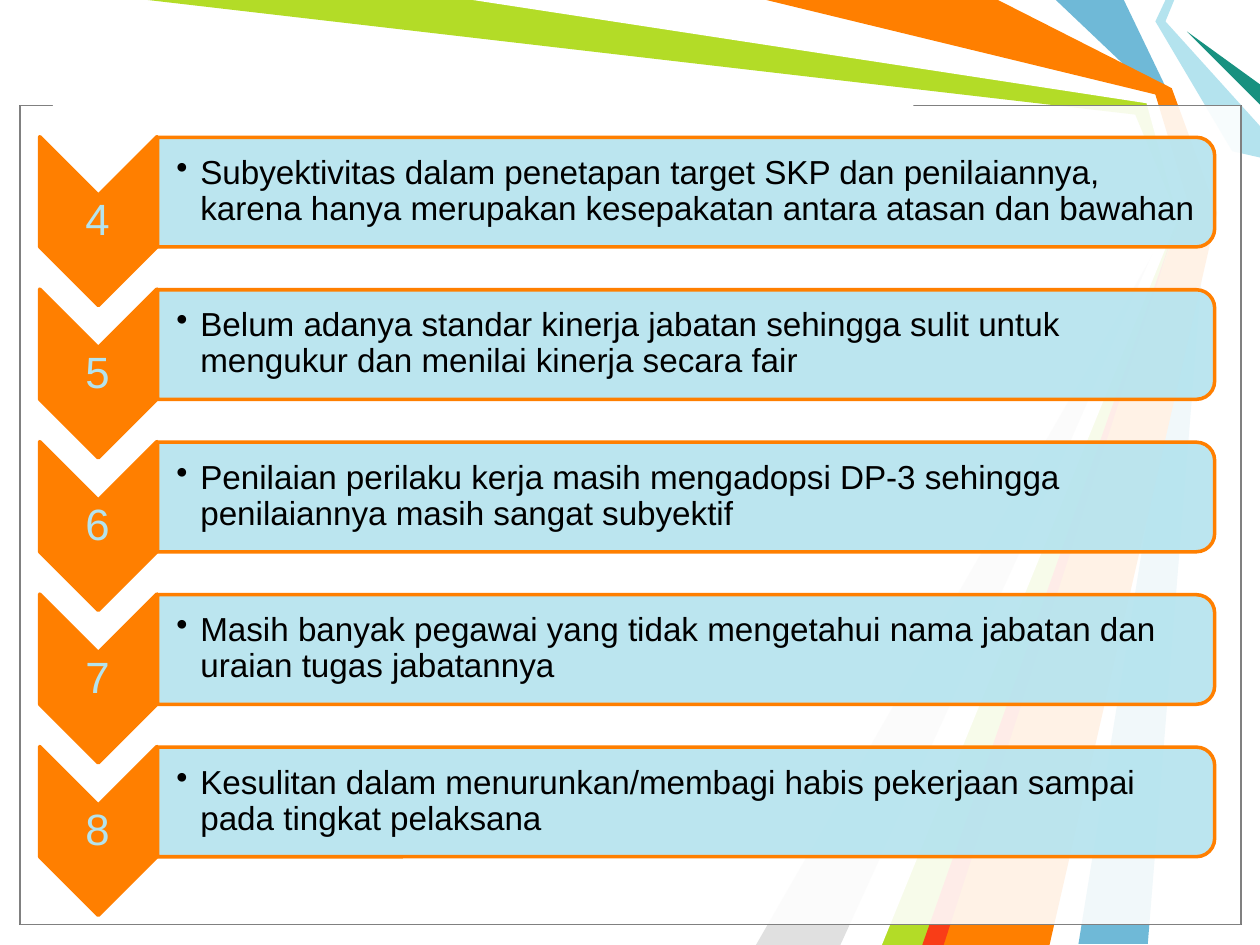
from lxml.etree import SubElement
from pptx import Presentation
from pptx.dml.color import RGBColor
from pptx.enum.shapes import MSO_SHAPE
from pptx.enum.text import MSO_ANCHOR, PP_ALIGN
from pptx.oxml.ns import qn
from pptx.util import Inches, Pt

COLORS = {
    "blue": "6FB9D7", "lime": "B3DC27", "gray": "E0E0E0", "white": "FFFFFF",
    "pale": "B4E3EE", "teal": "189180", "orange": "FF7F00", "red": "F93D17",
    "black": "000000", "edge": "808080",
}

# Ray outlines, in hundredths of an inch
RAYS = [
    ("blue", [(838, 0), (892, 0), (929, 77), (958, 167), (911, 749),
              (856, 749), (950, 167), (917, 75)]),
    ("lime", [(117, 0), (383, 0), (914, 78), (942, 169), (742, 750),
              (692, 750), (935, 173), (901, 91)]),
    ("gray", [(667, 750), (927, 181), (600, 750)]),
    ("white", [(375, 0), (910, 82), (932, 162), (675, 750), (700, 750),
               (941, 158), (917, 75), (600, 0)]),
    ("pale", [(925, 0), (917, 17), (978, 120), (1000, 125), (1000, 100),
              (925, 17), (932, 0)]),
    ("teal", [(1000, 83), (942, 25), (1000, 67)]),
    ("orange", [(608, 0), (792, 0), (930, 70), (966, 169), (833, 750),
                (733, 750), (942, 158), (917, 75)]),
    ("red", [(732, 750), (932, 183), (749, 750)]),
]

ITEMS = [
    "Subyektivitas dalam penetapan target SKP dan penilaiannya, "
    "karena hanya merupakan kesepakatan antara atasan dan bawahan",
    "Belum adanya standar kinerja jabatan sehingga sulit untuk "
    "mengukur dan menilai kinerja secara fair",
    "Penilaian perilaku kerja masih mengadopsi DP-3 sehingga "
    "penilaiannya masih sangat subyektif",
    "Masih banyak pegawai yang tidak mengetahui nama jabatan dan "
    "uraian tugas jabatannya",
    "Kesulitan dalam menurunkan/membagi habis pekerjaan sampai "
    "pada tingkat pelaksana",
]
FIRST = 4
TOP, STEP = 1.29, 1.21

NUMBER = {"size": Pt(25), "name": "Arial"}
BODY = {"size": Pt(19), "name": "Arial"}


def put(target, values):
    """Set each named attribute on the target."""
    for name, value in values.items():
        setattr(target, name, value)


def rgb(name):
    return RGBColor.from_string(COLORS[name])


def paint(shape, fill, line=None, width=0.75, alpha=100):
    shape.shadow.inherit = False
    shape.fill.solid()
    shape.fill.fore_color.rgb = rgb(fill)
    if alpha < 100:
        color = shape._element.spPr.find(qn("a:solidFill"))[0]
        SubElement(color, qn("a:alpha"), val=str(alpha * 1000))
    if line:
        shape.line.color.rgb = rgb(line)
        shape.line.width = Pt(width)
    else:
        shape.line.fill.background()


def add_ray(slide, color, points):
    pen = slide.shapes.build_freeform(*points[0], scale=Inches(0.01))
    pen.add_line_segments(points[1:], close=True)
    paint(pen.convert_to_shape(), color)


def add_form(slide, kind, box, turn=0, **style):
    shape = slide.shapes.add_shape(kind, *map(Inches, box))
    shape.rotation = turn
    paint(shape, **style)


def add_text(slide, text, box, pads, color, font, bullet=False):
    frame = slide.shapes.add_textbox(*map(Inches, box)).text_frame
    left, rest = map(Inches, pads)
    put(frame, {"word_wrap": True, "vertical_anchor": MSO_ANCHOR.MIDDLE,
                "margin_left": left, "margin_right": rest,
                "margin_top": rest, "margin_bottom": rest})
    para = frame.paragraphs[0]
    para.text = text
    put(para, {"line_spacing": 0.9,
               "alignment": PP_ALIGN.LEFT if bullet else PP_ALIGN.CENTER})
    if bullet:
        para.level = 1
        props = para._p.get_or_add_pPr()
        props.set("marL", str(Inches(0.19)))
        props.set("indent", str(-Inches(0.19)))
        SubElement(props, qn("a:buChar"), char="•")
    run = para.runs[0].font
    put(run, font)
    run.color.rgb = rgb(color)


def add_row(slide, index, text):
    top = TOP + index * STEP
    add_form(slide, MSO_SHAPE.CHEVRON, (0.11, top, 1.34, 0.93), 90,
             fill="orange", line="orange", width=2)
    add_text(slide, str(FIRST + index), (0.31, top + 0.27, 0.93, 0.4),
             (0.02, 0.02), "pale", NUMBER)
    add_form(slide, MSO_SHAPE.ROUND_2_SAME_RECTANGLE,
             (5.01, top - 3.96, 0.87, 8.39), 90,
             fill="pale", line="orange", width=2, alpha=90)
    add_text(slide, text, (1.25, top - 0.16, 8.35, 0.78),
             (0.15, 0.01), "black", BODY, bullet=True)


def main():
    deck = Presentation()
    put(deck, {"slide_width": Inches(10), "slide_height": Inches(7.5)})
    slide = deck.slides.add_slide(deck.slide_layouts[6])
    for color, points in RAYS:
        add_ray(slide, color, points)
    for edge in ("black", "edge"):
        add_form(slide, MSO_SHAPE.RECTANGLE, (0.16, 0.84, 9.69, 6.5),
                 fill="white", line=edge, alpha=69)
    add_form(slide, MSO_SHAPE.RECTANGLE, (0.42, 0.74, 6.83, 0.17),
             fill="white")
    for index, text in enumerate(ITEMS):
        add_row(slide, index, text)
    deck.save("out.pptx")


if __name__ == "__main__":
    main()
